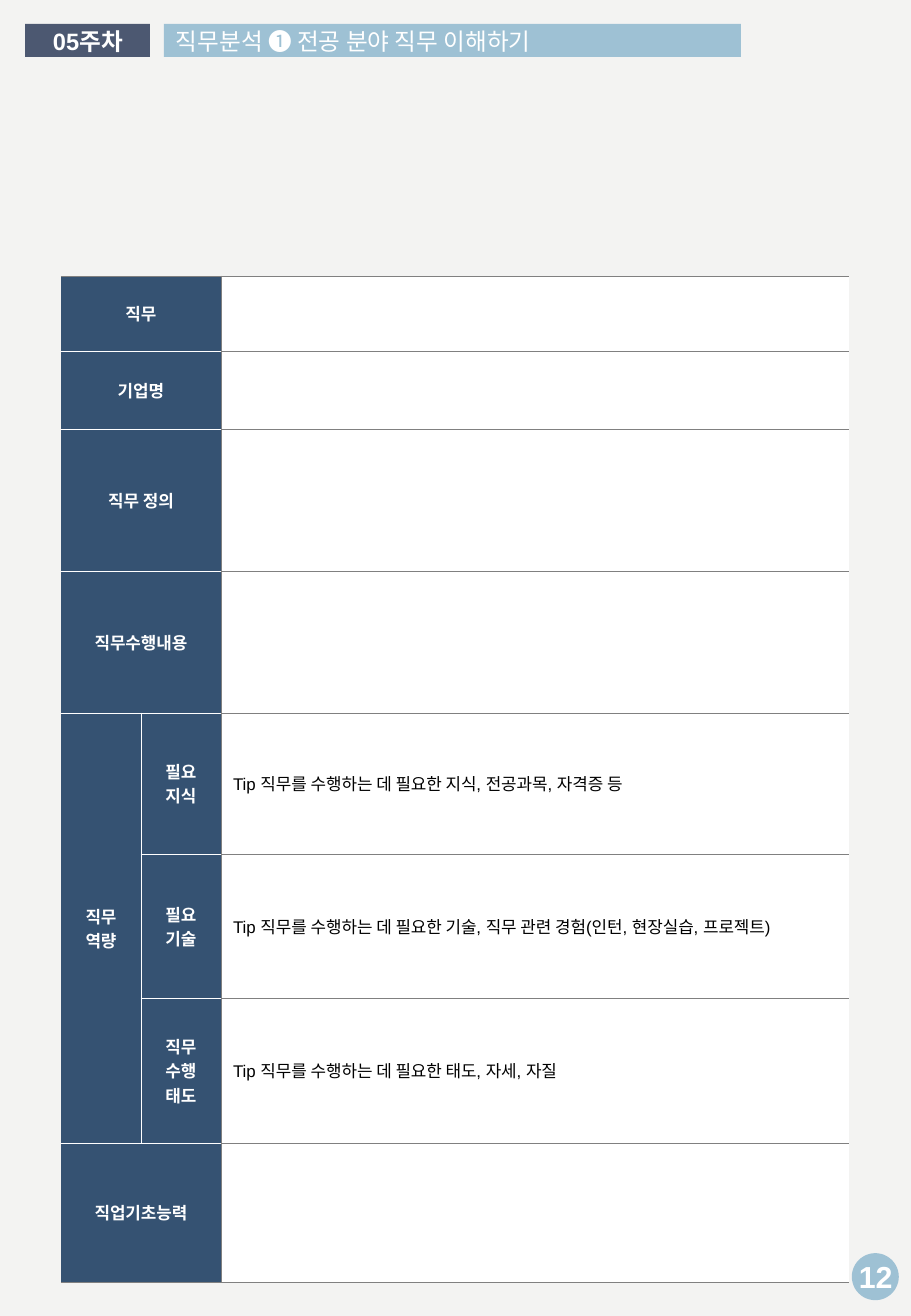
import pptx
import pptx.dml.color
import pptx.enum.shapes
import pptx.enum.text
import pptx.oxml
import pptx.oxml.ns
import pptx.util

PX = 7526  # EMU in one px
SKY, SLATE, NAVY = "9EC1D4", "4C5871", "355272"
PAPER, WHITE, BLACK, GRAY = "F3F3F2", "FFFFFF", "000000", "808080"
SHAPE = pptx.enum.shapes.MSO_SHAPE
ALIGN = pptx.enum.text.PP_ALIGN
ANCHOR = pptx.enum.text.MSO_ANCHOR

COLUMN_WIDTHS = [80, 80, 628]
ROW_HEIGHTS = [75, 78, 142, 142, 141, 144, 145, 139]
COMPETENCY_ROWS = range(4, 7)
WIDE_HEADS = {0: "직무", 1: "기업명", 2: "직무 정의", 3: "직무수행내용", 7: "직업기초능력"}
COMPETENCIES = [
    ("필요\n지식", "Tip 직무를 수행하는 데 필요한 지식, 전공과목, 자격증 등"),
    ("필요\n기술", "Tip 직무를 수행하는 데 필요한 기술, 직무 관련 경험(인턴, 현장실습, 프로젝트)"),
    ("직무\n수행\n태도", "Tip 직무를 수행하는 데 필요한 태도, 자세, 자질"),
]


def rgb(value):
    return pptx.dml.color.RGBColor.from_string(value)


def lengths(*values):
    return [value * PX for value in values]


class Worksheet:
    def __init__(self, deck):
        self.font = "Arial"
        self.page = deck.slides.add_slide(deck.slide_layouts[6])
        self.paint(self.page.background, PAPER)

    def paint(self, target, color):
        target.fill.solid()
        target.fill.fore_color.rgb = rgb(color)

    def shape(self, kind, place, color):
        shape = self.page.shapes.add_shape(kind, *lengths(*place))
        shape.shadow.inherit = False
        self.paint(shape, color)
        shape.line.fill.background()

    def fill_text(self, frame, text, size, color=WHITE, bold=True, align=ALIGN.CENTER):
        """Fill a text frame, one paragraph for each line of text."""
        style = {"name": self.font, "size": pptx.util.Pt(size), "bold": bold}
        for index, line in enumerate(text.split("\n")):
            para = frame.add_paragraph() if index else frame.paragraphs[0]
            para.alignment = align
            span = para.add_run()
            span.text = line
            for name, value in style.items():
                setattr(span.font, name, value)
            span.font.color.rgb = rgb(color)

    def text(self, place, text, size, wrap=True, **style):
        box = self.page.shapes.add_textbox(*lengths(*place))
        box.text_frame.word_wrap = wrap
        self.fill_text(box.text_frame, text, size, **style)

    def border(self, cell, sides):
        """Draw half-point cell borders; a side with no colour is left open."""
        properties = cell._tc.get_or_add_tcPr()
        for side in "LRTB":
            line = pptx.oxml.parse_xml(
                f'<a:ln{side} {pptx.oxml.ns.nsdecls("a")} w="6350"/>')
            color = sides.get(side)
            kind = "a:solidFill" if color else "a:noFill"
            fill = line.makeelement(pptx.oxml.ns.qn(kind), {})
            line.append(fill)
            if color:
                fill.append(fill.makeelement(pptx.oxml.ns.qn("a:srgbClr"), {"val": color}))
            properties.append(line)

    def table(self, left, top, widths, heights):
        place = lengths(left, top, sum(widths), sum(heights))
        table = self.page.shapes.add_table(len(heights), len(widths), *place).table
        for column, width in zip(table.columns, widths):
            column.width = width * PX
        for row, height in zip(table.rows, heights):
            row.height = height * PX
        return table

    def cell(self, cell, text, **style):
        cell.vertical_anchor = ANCHOR.MIDDLE
        self.fill_text(cell.text_frame, text, 10, **style)


def head_sides(row, column):
    split = row in COMPETENCY_ROWS
    return {
        "L": WHITE if split and column == 1 else None,
        "R": WHITE if split and column == 0 else GRAY,
        "T": GRAY if row == 0 else WHITE,
        "B": GRAY if row == len(ROW_HEIGHTS) - 1 else WHITE,
    }


def add_job_table(sheet):
    table = sheet.table(61, 276, COLUMN_WIDTHS, ROW_HEIGHTS)
    for row in range(len(ROW_HEIGHTS)):
        for column in range(len(COLUMN_WIDTHS)):
            cell, is_head = table.cell(row, column), column < 2
            sides = head_sides(row, column) if is_head else dict.fromkeys("LTB", GRAY)
            sheet.border(cell, sides)
            sheet.paint(cell, NAVY if is_head else WHITE)
    for row, head in WIDE_HEADS.items():
        table.cell(row, 0).merge(table.cell(row, 1))
        sheet.cell(table.cell(row, 0), head)
    first, last = COMPETENCY_ROWS[0], COMPETENCY_ROWS[-1]
    table.cell(first, 0).merge(table.cell(last, 0))
    sheet.cell(table.cell(first, 0), "직무\n역량")
    for row, (head, tip) in zip(COMPETENCY_ROWS, COMPETENCIES):
        sheet.cell(table.cell(row, 1), head)
        sheet.cell(table.cell(row, 2), tip, color=BLACK, bold=False, align=ALIGN.LEFT)


def main():
    deck = pptx.Presentation()
    deck.slide_width = pptx.util.Inches(7.5)
    deck.slide_height = pptx.util.Inches(10.83)
    sheet = Worksheet(deck)
    sheet.shape(SHAPE.RECTANGLE, (164, 24, 577, 33), SKY)
    sheet.shape(SHAPE.RECTANGLE, (25, 24, 125, 33), SLATE)
    sheet.text((164, 21, 623, 41), "직무분석 ❶ 전공 분야 직무 이해하기", 14,
               bold=False, align=ALIGN.LEFT)
    sheet.text((33, 21, 110, 41), "05주차", 14)
    add_job_table(sheet)
    sheet.shape(SHAPE.OVAL, (852, 1253, 47, 47), SKY)
    sheet.text((846, 1252, 60, 49), "12", 18, wrap=False)
    deck.save("out.pptx")


if __name__ == "__main__":
    main()
